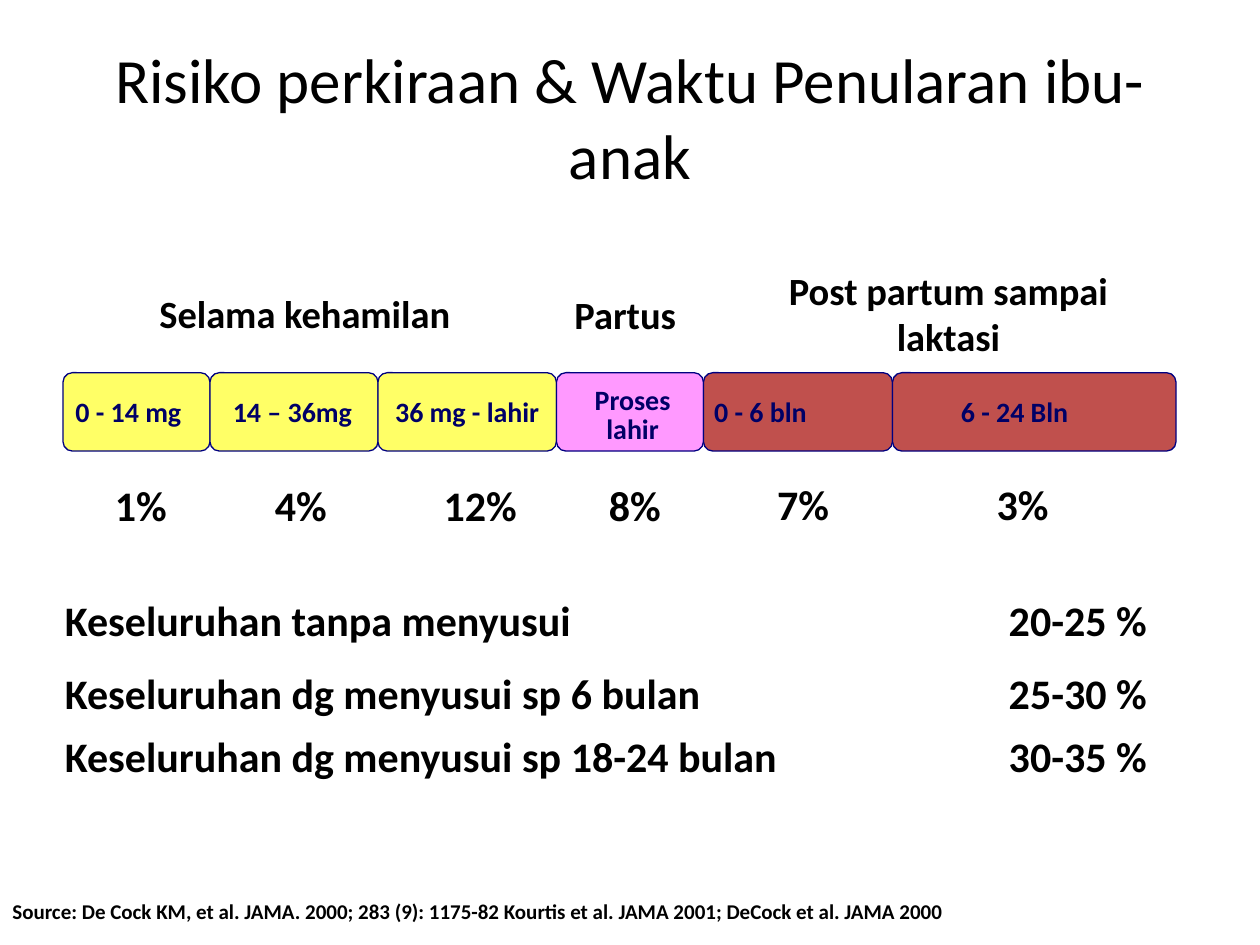
from dataclasses import dataclass
from itertools import accumulate

from pptx import Presentation
from pptx.dml.color import RGBColor
from pptx.enum.shapes import MSO_SHAPE
from pptx.enum.text import MSO_ANCHOR, PP_ALIGN
from pptx.util import Pt

ROUNDED = MSO_SHAPE.ROUNDED_RECTANGLE
TOP, MIDDLE = MSO_ANCHOR.TOP, MSO_ANCHOR.MIDDLE
LEFT, CENTER, RIGHT = PP_ALIGN.LEFT, PP_ALIGN.CENTER, PP_ALIGN.RIGHT


@dataclass(frozen=True)
class Theme:
    """Fonts, colours and type sizes of the slide."""
    font: str = "Calibri"
    ink: RGBColor = RGBColor(0x00, 0x00, 0x00)
    period_ink: RGBColor = RGBColor(0x00, 0x00, 0x66)
    outline: RGBColor = RGBColor(0x00, 0x00, 0x80)
    pregnancy: RGBColor = RGBColor(0xFF, 0xFF, 0x66)
    birth: RGBColor = RGBColor(0xFF, 0x99, 0xFF)
    lactation: RGBColor = RGBColor(0xC0, 0x50, 0x4D)
    title_size: int = 36
    phase_size: int = 22
    risk_size: int = 24
    period_size: int = 16
    source_size: int = 12


THEME = Theme()
BAR_LEFT, BAR_TOP, BAR_HEIGHT = 36, 213, 44.8
PERIOD_TOP, RISK_TOP = 221.8, 270.5

PHASES = [
    ("Selama kehamilan", 84, 162, 205, 34, LEFT),
    ("Partus", 321.2, 162.7, 83, 34, LEFT),
    ("Post partum sampai laktasi", 424, 149, 236, 60, CENTER),
]
STAGES = [
    (84, THEME.pregnancy),
    (96, THEME.pregnancy),
    (102, THEME.pregnancy),
    (84, THEME.birth),
    (108, THEME.lactation),
    (162, THEME.lactation),
]
PERIODS = [
    ("0 - 14 mg", 36, PERIOD_TOP, 84, LEFT, 1),
    ("14 – 36mg", 126, PERIOD_TOP, 92, LEFT, 1),
    ("36 mg - lahir", 204, PERIOD_TOP, 126, CENTER, 1),
    ("Proses lahir", 321, 218, 81, CENTER, 0.85),
    ("0 - 6 bln", 401, PERIOD_TOP, 75, LEFT, 1),
    ("6 - 24 Bln", 542, PERIOD_TOP, 86, LEFT, 1),
]
RISKS = [
    ("1%", 58.5, RISK_TOP),
    ("4%", 150, RISK_TOP),
    ("12%", 246.4, RISK_TOP),
    ("8%", 340.8, RISK_TOP),
    ("7%", 437, RISK_TOP - 0.7),
    ("3%", 562.4, RISK_TOP - 0.7),
]
OVERALL = [
    ("Keseluruhan tanpa menyusui", "20-25 %", 336),
    ("Keseluruhan dg menyusui sp 6 bulan", "25-30 %", 378),
    ("Keseluruhan dg menyusui sp 18-24 bulan", "30-35 %", 414),
]


def add_label(slide, wording, left, top, width, height, size, align=LEFT,
              color=THEME.ink, bold=True, anchor=TOP, spacing=1):
    """Place one paragraph of text."""
    frame = slide.shapes.add_textbox(
        Pt(left), Pt(top), Pt(width), Pt(height)).text_frame
    frame.word_wrap = True
    frame.vertical_anchor = anchor
    paragraph = frame.paragraphs[0]
    paragraph.text = wording
    paragraph.alignment = align
    paragraph.line_spacing = spacing
    paragraph.font.name = THEME.font
    paragraph.font.size = Pt(size)
    paragraph.font.bold = bold
    paragraph.font.color.rgb = color


def add_stage(slide, left, width, color):
    """Draw one rounded section of the timeline."""
    stage = slide.shapes.add_shape(
        ROUNDED, Pt(left), Pt(BAR_TOP), Pt(width), Pt(BAR_HEIGHT))
    stage.adjustments[0] = 0.12
    stage.shadow.inherit = False
    stage.fill.solid()
    stage.fill.fore_color.rgb = color
    stage.line.color.rgb = THEME.outline
    stage.line.width = Pt(0.75)


def add_timeline(slide):
    """Draw the phases, stages, periods and risks of transmission."""
    for phase, left, top, width, height, align in PHASES:
        add_label(slide, phase, left, top, width, height,
                  THEME.phase_size, align)
    starts = accumulate((width for width, _ in STAGES), initial=BAR_LEFT)
    for left, (width, color) in zip(starts, STAGES):
        add_stage(slide, left, width, color)
    for period, left, top, width, align, spacing in PERIODS:
        add_label(slide, period, left, top, width, 27, THEME.period_size,
                  align, THEME.period_ink, spacing=spacing)
    for risk, left, top in RISKS:
        add_label(slide, risk, left, top, 63, 36, THEME.risk_size)


def add_overall(slide):
    """List the overall risk for each feeding duration."""
    for feeding, risk, top in OVERALL:
        add_label(slide, feeding, 30, top, 522, 38, THEME.risk_size)
        add_label(slide, risk, 552, top, 110.4, 38, THEME.risk_size, RIGHT)


def main():
    """Build and save the slide."""
    deck = Presentation()
    deck.slide_width, deck.slide_height = Pt(720), Pt(540)
    slide = deck.slides.add_slide(deck.slide_layouts[6])
    add_label(slide, "Risiko perkiraan & Waktu Penularan ibu-anak",
              36, 21.6, 648, 90, THEME.title_size, CENTER,
              bold=False, anchor=MIDDLE)
    add_timeline(slide)
    add_overall(slide)
    add_label(slide, "Source: De Cock KM, et al. JAMA. 2000; 283 (9): 1175-82 "
              "Kourtis et al. JAMA 2001; DeCock et al. JAMA 2000",
              0, 510, 636, 30, THEME.source_size)
    deck.save("out.pptx")


if __name__ == "__main__":
    main()
